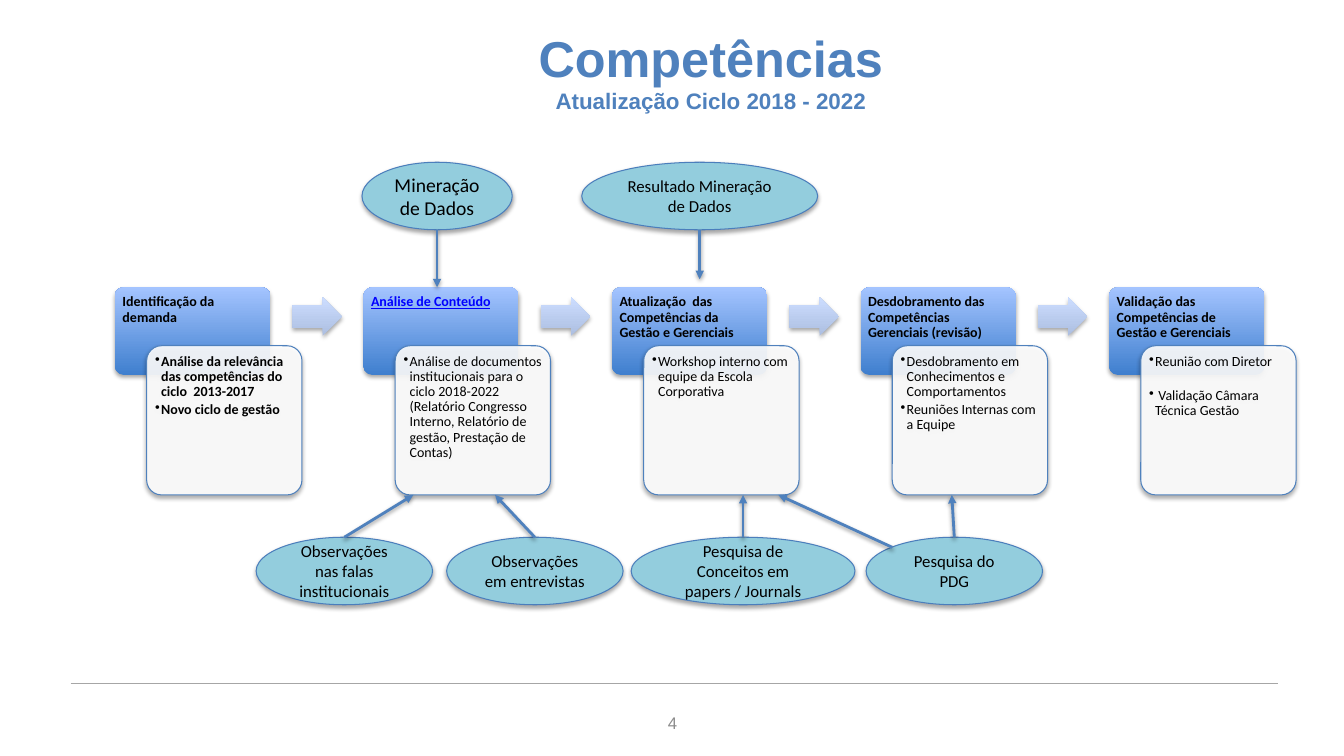
import pptx
import pptx.dml.color
import pptx.enum.shapes
import pptx.enum.text
import pptx.oxml.ns
import pptx.util
from dataclasses import dataclass
from lxml import etree
from pptx.util import Inches, Pt

SHAPE = pptx.enum.shapes.MSO_SHAPE
ANCHOR = pptx.enum.text.MSO_ANCHOR
ALIGN = pptx.enum.text.PP_ALIGN

# Content
TITLE = "Competências"
SUBTITLE = "Atualização Ciclo 2018 - 2022"
PAGE_NUMBER = "4"
STEPS = [
    ("Identificação da demanda",
     ["Análise da relevância das competências do ciclo  2013-2017", "Novo ciclo de gestão"]),
    ("Análise de Conteúdo",
     ["Análise de documentos institucionais para o ciclo 2018-2022 (Relatório Congresso "
      "Interno, Relatório de gestão, Prestação de Contas)"]),
    ("Atualização  das Competências da Gestão e Gerenciais",
     ["Workshop interno com equipe da Escola Corporativa"]),
    ("Desdobramento das Competências Gerenciais (revisão)",
     ["Desdobramento em Conhecimentos e Comportamentos", "Reuniões Internas com a Equipe"]),
    ("Validação das Competências de Gestão e Gerenciais",
     ["Reunião com Diretor", " Validação Câmara Técnica Gestão"]),
]
BOLD_STEP, LINK_STEP, SPACED_STEP = 0, 1, 4

# Ellipses: text, left, width, type size
UPPER_SOURCES = [
    ("Mineração de Dados", 3.59, 1.49, 14),
    ("Resultado Mineração de Dados", 5.77, 2.34, 12),
]
LOWER_SOURCES = [
    ("Observações nas falas institucionais", 2.54, 1.75, 12),
    ("Observações em entrevistas", 4.43, 1.75, 12),
    ("Pesquisa de Conceitos em papers / Journals", 6.26, 2.22, 12),
    ("Pesquisa do PDG", 8.59, 1.75, 12),
]
UPPER_ARROW_ENDS = [2.85, 2.77]
LOWER_ARROW_ENDS = [4.1, 4.91, 7.37, 9.44]

# Geometry in inches
STEP_LEFT, STEP_TOP, STEP_PITCH, STEP_WIDTH = 1.14, 2.85, 2.465, 1.54
HEAD_HEIGHT, DETAIL_HEIGHT = 0.87, 1.48
DETAIL_SHIFT, DETAIL_TOP = 0.315, 3.43
DETAIL_BOTTOM = DETAIL_TOP + DETAIL_HEIGHT
ARROW_SHIFT, ARROW_TOP = 1.76, 2.95
UPPER_TOP, LOWER_TOP, SOURCE_HEIGHT = 1.61, 5.33, 0.67


@dataclass(frozen=True)
class Theme:
    accent: str = "4F81BD"
    text: str = "000000"
    link: str = "0000FF"
    paper: str = "FFFFFF"
    head: tuple = ("3F7FCE", "A4C4FF")
    arrow: tuple = ("ADBFE1", "CCDDFF")
    source: str = "93CDDD"
    source_line: str = "4B7EBC"
    rule: str = "A6A6A6"
    page: str = "8C8C8C"
    heading_font: str = "Arial"
    body_font: str = "Calibri"
    title_size: int = 36
    subtitle_size: int = 16
    step_size: int = 10
    page_size: int = 12


THEME = Theme()


def rgb(value):
    return pptx.dml.color.RGBColor.from_string(value)


def child(parent, tag, **attributes):
    element = etree.SubElement(parent, pptx.oxml.ns.qn(tag))
    for name, value in attributes.items():
        element.set(name, str(value))
    return element


def set_shadow(shape, opacity=None, distance=1.8):
    """Replace the theme shadow by a soft one, or by none."""
    properties = shape._element.spPr
    for effects in properties.findall(pptx.oxml.ns.qn("a:effectLst")):
        properties.remove(effects)
    effects = child(properties, "a:effectLst")
    if opacity:
        shadow = child(effects, "a:outerShdw", blurRad=Pt(3.1), dist=Pt(distance),
                       dir=90 * 60000, rotWithShape=0)
        color = child(shadow, "a:srgbClr", val="000000")
        child(color, "a:alpha", val=opacity * 1000)


def add_box(kind, left, top, width, height, fill, line=None, adjustments=(), opacity=None):
    shape = slide.shapes.add_shape(kind, Inches(left), Inches(top), Inches(width), Inches(height))
    for index, value in enumerate(adjustments):
        shape.adjustments[index] = value
    if isinstance(fill, tuple):
        shape.fill.gradient()
        shape.fill.gradient_angle = 90
        for stop, color in zip(shape.fill.gradient_stops, fill):
            stop.color.rgb = rgb(color)
    else:
        shape.fill.solid()
        shape.fill.fore_color.rgb = rgb(fill)
    if opacity:
        color = shape._element.spPr.find(".//" + pptx.oxml.ns.qn("a:srgbClr"))
        child(color, "a:alpha", val=opacity * 1000)
    if line:
        shape.line.color.rgb = rgb(line)
        shape.line.width = Pt(0.75)
    else:
        shape.line.fill.background()
    set_shadow(shape, opacity=35)
    return shape


def add_text(shape, text, size, font=THEME.body_font, color=THEME.text, bold=False,
             underline=False, align=ALIGN.CENTER, anchor=ANCHOR.MIDDLE, inset=None,
             line_spacing=None, before=None, after=None, bullet=False):
    """Add one paragraph to the shape, using the empty first one if there is one."""
    frame = shape.text_frame
    frame.word_wrap = True
    frame.auto_size = pptx.enum.text.MSO_AUTO_SIZE.NONE
    frame.vertical_anchor = anchor
    if inset is not None:
        frame.margin_left = frame.margin_right = Inches(inset)
        frame.margin_top = frame.margin_bottom = Inches(inset)
    paragraph = frame.add_paragraph() if frame.text else frame.paragraphs[0]
    if bullet:
        properties = paragraph._p.get_or_add_pPr()
        properties.set("marL", str(Inches(0.06)))
        properties.set("indent", str(-Inches(0.06)))
        child(properties, "a:buChar", char="•")
    paragraph.alignment = align
    if line_spacing:
        paragraph.line_spacing = line_spacing
    if before:
        paragraph.space_before = Pt(before)
    if after:
        paragraph.space_after = Pt(after)
    run = paragraph.add_run()
    run.text = text
    run.font.name, run.font.size = font, Pt(size)
    run.font.bold, run.font.underline = bold, underline
    run.font.color.rgb = rgb(color)


def add_line(start, end, color=THEME.accent, width=2, arrow=True):
    points = [Inches(value) for value in (*start, *end)]
    line = slide.shapes.add_connector(pptx.enum.shapes.MSO_CONNECTOR.STRAIGHT, *points)
    line.line.color.rgb = rgb(color)
    line.line.width = Pt(width)
    if arrow:
        child(line.line._get_or_add_ln(), "a:tailEnd", type="triangle")
    set_shadow(line, opacity=38 if arrow else None, distance=1.6)
    return line


def add_source(source, top):
    text, left, width, size = source
    ellipse = add_box(SHAPE.OVAL, left, top, width, SOURCE_HEIGHT, THEME.source, THEME.source_line)
    add_text(ellipse, text, size)
    return ellipse, left + width / 2


presentation = pptx.Presentation()
presentation.slide_width, presentation.slide_height = Inches(13.33), Inches(7.5)
slide = presentation.slides.add_slide(presentation.slide_layouts[5])

# Title
title = slide.shapes.title
title.left, title.top, title.width, title.height = map(Inches, (1.05, 0.26, 12, 0.88))
for text, size in ((TITLE, THEME.title_size), (SUBTITLE, THEME.subtitle_size)):
    add_text(title, text, size, font=THEME.heading_font, color=THEME.accent, bold=True)

# Footer rule and page number
add_line((0.7, 6.78), (12.68, 6.78), THEME.rule, 0.25, arrow=False)
page = slide.shapes.add_textbox(Inches(5.87), Inches(6.97), Inches(1.6), Inches(0.4))
add_text(page, PAGE_NUMBER, THEME.page_size, font=THEME.heading_font, color=THEME.page)

# Process steps
step_format = dict(size=THEME.step_size, align=ALIGN.LEFT, anchor=ANCHOR.TOP, line_spacing=0.9)
for index, (heading, details) in enumerate(STEPS):
    left = STEP_LEFT + index * STEP_PITCH
    linked = index == LINK_STEP
    head = add_box(SHAPE.ROUNDED_RECTANGLE, left, STEP_TOP, STEP_WIDTH, HEAD_HEIGHT,
                   THEME.head, adjustments=[0.1])
    add_text(head, heading, bold=True, underline=linked, inset=0.05,
             color=THEME.link if linked else THEME.text, **step_format)
    detail = add_box(SHAPE.ROUNDED_RECTANGLE, left + DETAIL_SHIFT, DETAIL_TOP, STEP_WIDTH,
                     DETAIL_HEIGHT, THEME.paper, THEME.accent, [0.1], opacity=90)
    for position, text in enumerate(details):
        gap = 11.5 if index == SPACED_STEP and position else None
        add_text(detail, text, bold=index == BOLD_STEP, inset=0.04, before=gap, after=2,
                 bullet=True, **step_format)
    if index < len(STEPS) - 1:
        add_box(SHAPE.RIGHT_ARROW, left + ARROW_SHIFT, ARROW_TOP, 0.49, 0.38,
                THEME.arrow, adjustments=[0.6, 0.5])

# Sources above the steps
for source, arrow_end in zip(UPPER_SOURCES, UPPER_ARROW_ENDS):
    ellipse, center = add_source(source, UPPER_TOP)
    add_line((center, UPPER_TOP + SOURCE_HEIGHT), (center, arrow_end))

# Sources below the steps
for source, arrow_end in zip(LOWER_SOURCES, LOWER_ARROW_ENDS):
    ellipse, center = add_source(source, LOWER_TOP)
    arrow = add_line((center, LOWER_TOP), (arrow_end, DETAIL_BOTTOM))
    arrow.begin_connect(ellipse, 0)
add_line((8.85, 5.43), (7.72, DETAIL_BOTTOM))

presentation.save("out.pptx")
